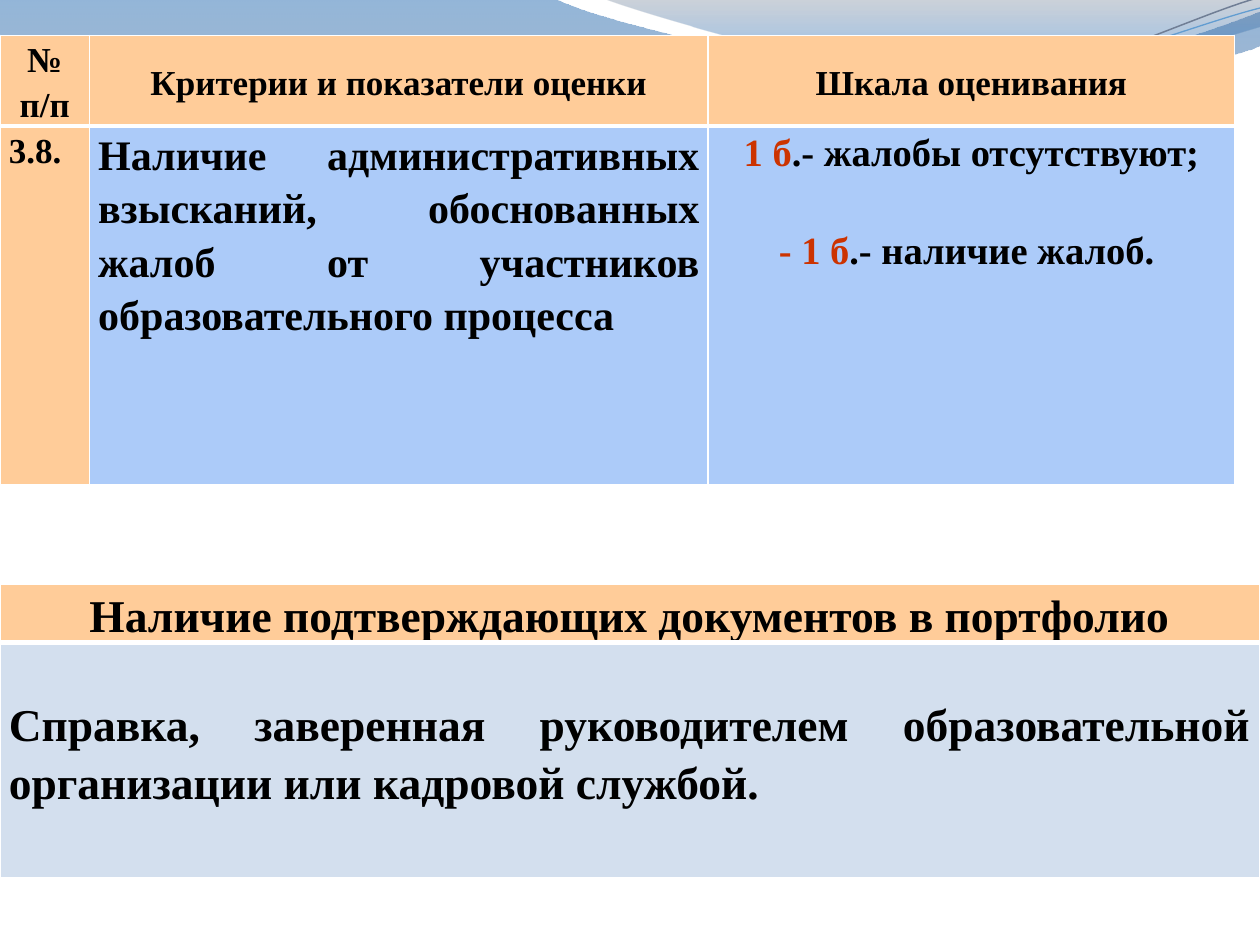
"""Build a slide with an assessment criterion table and a supporting documents table."""
import pptx
import pptx.dml.color
import pptx.enum.text
import pptx.oxml
import pptx.oxml.ns
import pptx.util

Inches, Pt = pptx.util.Inches, pptx.util.Pt
ALIGN = pptx.enum.text.PP_ALIGN
ANCHOR = pptx.enum.text.MSO_ANCHOR
NS = pptx.oxml.ns.nsdecls("a")
qn = pptx.oxml.ns.qn

BLACK, WHITE, RED = "000000", "FFFFFF", "CC3300"
PEACH, BLUE, PALE = "FFCC99", "ACCBF9", "D3DFEE"


def rgb(value):
    return pptx.dml.color.RGBColor.from_string(value)


class Slide:
    font = "Times New Roman"
    line_spacing = 1.15
    side_margin = 0.07

    def __init__(self, prs):
        self.s = prs.slides.add_slide(prs.slide_layouts[6])

    def outline(self, start, segments, closed):
        points = [(round(x * 100), round(y * 100))
                  for x, y in [start] + [pt for segment in segments for pt in segment]]
        fb = self.s.shapes.build_freeform(*points[0], scale=Inches(0.01))
        fb.add_line_segments(points[1:], close=closed)
        sp = fb.convert_to_shape()
        sp.shadow.inherit = False
        lines = iter(list(sp.element.spPr.iter(qn("a:lnTo"))))
        for segment in segments:
            steps = [next(lines) for _ in segment]
            if len(steps) == 3:
                curve = pptx.oxml.parse_xml(f"<a:cubicBezTo {NS}/>")
                steps[0].addprevious(curve)
                for step in steps:
                    curve.append(step[0])
                    step.getparent().remove(step)
        return sp

    def wave(self, start, segments, stops):
        sp = self.outline(start, segments, True)
        sp.line.fill.background()
        sp.fill.background()
        gs = "".join(f'<a:gs pos="{pos * 1000}"><a:srgbClr val="{color}">'
                     f'<a:alpha val="{alpha * 1000}"/></a:srgbClr></a:gs>'
                     for pos, color, alpha in stops)
        gradient = pptx.oxml.parse_xml(f'<a:gradFill {NS} rotWithShape="1"><a:gsLst>{gs}</a:gsLst>'
                                       '<a:lin ang="5400000" scaled="0"/></a:gradFill>')
        props = sp.element.spPr
        props.replace(props.find(qn("a:noFill")), gradient)

    def curve(self, start, segments, color, width, rotation=357.3):
        sp = self.outline(start, segments, False)
        sp.rotation = rotation
        sp.fill.background()
        sp.line.color.rgb = rgb(color)
        sp.line.width = Pt(width)

    def table(self, left, top, cols, rows):
        shape = self.s.shapes.add_table(len(rows), len(cols), Inches(left), Inches(top),
                                        Inches(sum(cols)), Inches(sum(rows)))
        table = shape.table
        for column, width in zip(table.columns, cols):
            column.width = Inches(width)
        for row, height in zip(table.rows, rows):
            row.height = Inches(height)
        return table

    def cell(self, table, row, col, paragraphs, size, fill, align=ALIGN.CENTER,
             anchor=ANCHOR.TOP, top=0, gap=0):
        cell = table.cell(row, col)
        cell.fill.solid()
        cell.fill.fore_color.rgb = rgb(fill)
        cell.vertical_anchor = anchor
        cell.margin_left = cell.margin_right = Inches(self.side_margin)
        cell.margin_top, cell.margin_bottom = Inches(top), 0
        self.borders(cell, {"L": 1, "R": 1, "T": 3 if row else 1, "B": 1 if row else 3})
        tf = cell.text_frame
        for i, runs in enumerate(paragraphs):
            p = tf.add_paragraph() if i else tf.paragraphs[0]
            p.alignment, p.line_spacing = align, self.line_spacing
            if i:
                p.space_before = Pt(gap)
            for text, color in runs:
                r = p.add_run()
                r.text = text
                r.font.name, r.font.size, r.font.bold = self.font, Pt(size), True
                r.font.color.rgb = rgb(color)

    def borders(self, cell, widths):
        props = cell._tc.get_or_add_tcPr()
        for i, (side, width) in enumerate(widths.items()):
            props.insert(i, pptx.oxml.parse_xml(
                f'<a:ln{side} {NS} w="{Pt(width)}"><a:solidFill><a:srgbClr val="{WHITE}"/>'
                f'</a:solidFill></a:ln{side}>'))


def main():
    prs = pptx.Presentation()
    prs.slide_width, prs.slide_height = Inches(10), Inches(7.5)
    slide = Slide(prs)

    slide.wave((0, -0.01), [
        [(4.4, -0.01)],
        [(4.76, 0.17), (6.64, 0.63), (7.58, 0.63)],
        [(8.53, 0.63), (9.58, 0.26), (10, 0.09)],
        [(10.01, 0.36)],
        [(9.83, 0.44), (8.7, 0.76), (7.46, 0.75)],
        [(6.22, 0.75), (3.82, 0.28), (2.57, 0.34)],
        [(1.29, 0.35), (0.46, 0.83), (-0.01, 1.13)],
    ], [(0, "125EAA", 45), (100, "697FA4", 55)])
    slide.wave((4.79, -0.01), [
        [(5.09, 0.11), (6.82, 0.62), (7.69, 0.65)],
        [(8.56, 0.69), (9.61, 0.32), (10, 0.21)],
        [(10, 0)],
    ], [(0, "596982", 30), (80, "0670DA", 45)])
    slide.curve((-0.02, 0.87), [
        [(0.47, 0.72), (1.58, 0.41), (2.77, 0.42)],
        [(3.96, 0.42), (5.91, 0.93), (7.12, 0.9)],
        [(8.32, 0.87), (9.4, 0.36), (10, 0.22)],
    ], "707E95", 0.85)
    slide.curve((-0.02, 0.8), [
        [(0.46, 0.75), (1.64, 0.45), (2.83, 0.46)],
        [(4.03, 0.46), (5.96, 0.88), (7.16, 0.85)],
        [(8.35, 0.83), (9.42, 0.42), (10.02, 0.3)],
    ], "629DD1", 0.75)

    criteria = slide.table(0, 0.28, [0.71, 4.91, 4.18], [0.72, 2.85])
    slide.cell(criteria, 0, 0, [[("№", BLACK)], [("п/п", BLACK)]], 20, PEACH)
    for col, heading in enumerate(["Критерии и показатели оценки", "Шкала оценивания"], 1):
        slide.cell(criteria, 0, col, [[(heading, BLACK)]], 20, PEACH, anchor=ANCHOR.MIDDLE)
    slide.cell(criteria, 1, 0, [[("3.8.", BLACK)]], 20, PEACH, ALIGN.LEFT)
    slide.cell(criteria, 1, 1, [[("Наличие административных взысканий, обоснованных жалоб "
                                  "от участников образовательного процесса", BLACK)]],
               24, BLUE, ALIGN.JUSTIFY)
    slide.cell(criteria, 1, 2, [
        [("1 б", RED), (".- жалобы отсутствуют;", BLACK)],
        [("- 1 б", RED), (".- наличие жалоб. ", BLACK)],
    ], 22, BLUE, gap=28)

    documents = slide.table(0, 4.64, [10], [0.45, 1.87])
    slide.cell(documents, 0, 0, [[("Наличие подтверждающих документов в портфолио", BLACK)]],
               26, PEACH, anchor=ANCHOR.MIDDLE)
    slide.cell(documents, 1, 0, [[("Справка, заверенная руководителем образовательной "
                                   "организации или кадровой службой.", BLACK)]],
               26, PALE, ALIGN.JUSTIFY, top=0.4)

    prs.save("out.pptx")


if __name__ == "__main__":
    main()
